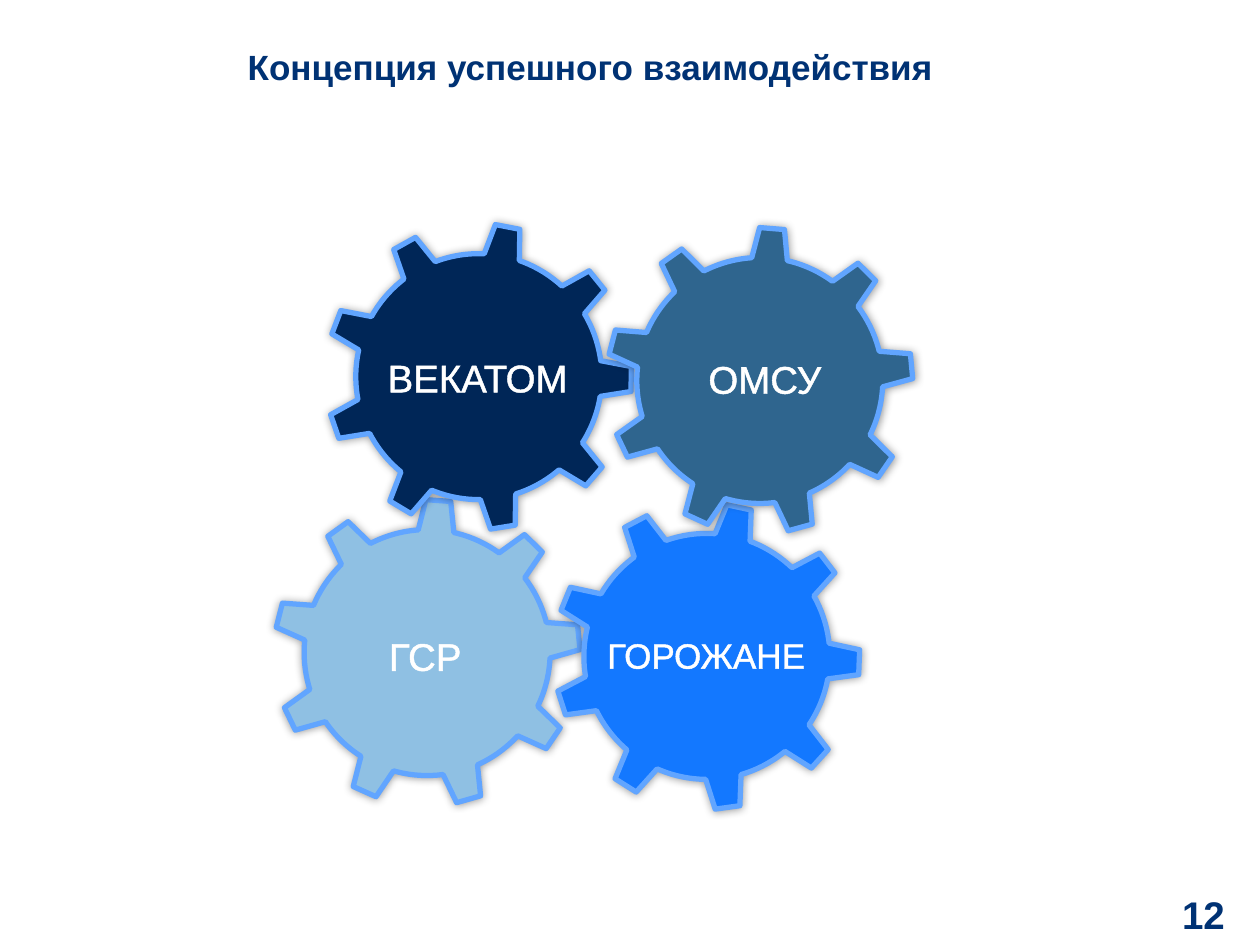
"""Build a slide with four interlocking gears, each naming one partner."""
from lxml.etree import SubElement
from pptx import Presentation
from pptx.dml.color import RGBColor
from pptx.enum.shapes import MSO_SHAPE
from pptx.enum.text import MSO_ANCHOR, MSO_AUTO_SIZE, PP_ALIGN
from pptx.oxml.ns import qn
from pptx.util import Inches, Pt

COLORS = {
    "heading": "003274", "label": "FFFFFF", "rim": "61A5FF", "shadow": "000000",
    "pale": "8FC0E3", "navy": "002657", "bright": "1378FF", "steel": "2F658E",
}
FONT = "Arial"
GEAR_SIZE = 2.44
TITLE = ("Концепция успешного взаимодействия", (0.51, 0, 8.35, 1.05), 20, PP_ALIGN.CENTER)
NUMBER = ("12", (9.03, 7.05, 0.69, 0.41), 22, PP_ALIGN.RIGHT)
GEARS = [
    ("pale", 2.17, 3.96, 44.2),
    ("navy", 2.58, 1.77, 50.9),
    ("bright", 4.39, 3.99, 52.2),
    ("steel", 4.81, 1.8, 44.6),
]
LABELS = [
    ("ВЕКАТОМ", (2.89, 2.76, 1.8, 0.47), 22, PP_ALIGN.CENTER, True),
    ("ОМСУ", (5.52, 2.77, 1.1, 0.35), 22, PP_ALIGN.CENTER, True),
    ("ГОРОЖАНЕ", (4.72, 4.98, 1.79, 0.44), 20, PP_ALIGN.LEFT, False),
    ("ГСР", (2.56, 4.97, 1.63, 0.47), 22, PP_ALIGN.CENTER, True),
]


def rgb(name):
    return RGBColor.from_string(COLORS[name])


def add_color(parent, name):
    fill = SubElement(parent, qn("a:solidFill"))
    return SubElement(fill, qn("a:srgbClr"), val=COLORS[name])


def add_shadow(parent, blur, distance):
    effects = parent.find(qn("a:effectLst"))
    if effects is None:
        effects = SubElement(parent, qn("a:effectLst"))
    shadow = SubElement(effects, qn("a:outerShdw"), blurRad=str(Pt(blur)),
                        dist=str(Pt(distance)), dir="5400000", algn="tl")
    color = SubElement(shadow, qn("a:srgbClr"), val=COLORS["shadow"])
    SubElement(color, qn("a:alpha"), val="40000")


def add_gear(page, color, left, top, angle):
    gear = page.shapes.add_shape(MSO_SHAPE.GEAR_9, Inches(left), Inches(top),
                                 Inches(GEAR_SIZE), Inches(GEAR_SIZE))
    gear.rotation = angle
    gear.fill.solid()
    gear.fill.fore_color.rgb = rgb(color)
    gear.line.color.rgb = rgb("rim")
    gear.line.width = Pt(3)
    gear.shadow.inherit = False
    add_shadow(gear.element.spPr, 5, 0)


def add_text(page, text, place, size, align, color, wrap=True):
    box = page.shapes.add_textbox(*map(Inches, place))
    frame = box.text_frame
    frame.word_wrap = wrap
    para = frame.paragraphs[0]
    para.alignment = align
    span = para.add_run()
    span.text = text
    font = para.font
    font.name, font.size = FONT, Pt(size)
    font.color.rgb = rgb(color)
    return frame, para, span.font._element if hasattr(span.font, "_element") else span._r.get_or_add_rPr()


def add_heading(page, text, place, size, align):
    frame, para, properties = add_text(page, text, place, size, align, "heading")
    frame.margin_left = frame.margin_right = frame.margin_top = frame.margin_bottom = 0
    frame.vertical_anchor = MSO_ANCHOR.MIDDLE
    para.font.bold = True
    return properties


def add_label(page, text, place, size, align, wrap):
    frame, para, properties = add_text(page, text, place, size, align, "label", wrap)
    frame.auto_size = MSO_AUTO_SIZE.SHAPE_TO_FIT_TEXT
    outline = SubElement(properties, qn("a:ln"), w=str(Pt(1.45)))
    add_color(outline, "label")
    add_color(properties, "label")
    add_shadow(properties, 5, 1)


def main():
    deck = Presentation()
    deck.slide_width, deck.slide_height = Inches(10), Inches(7.5)
    page = deck.slides.add_slide(deck.slide_layouts[6])
    add_heading(page, *TITLE)
    add_shadow(add_heading(page, *NUMBER), 5, 1)
    for gear in GEARS:
        add_gear(page, *gear)
    for label in LABELS:
        add_label(page, *label)
    deck.save("out.pptx")


if __name__ == "__main__":
    main()
